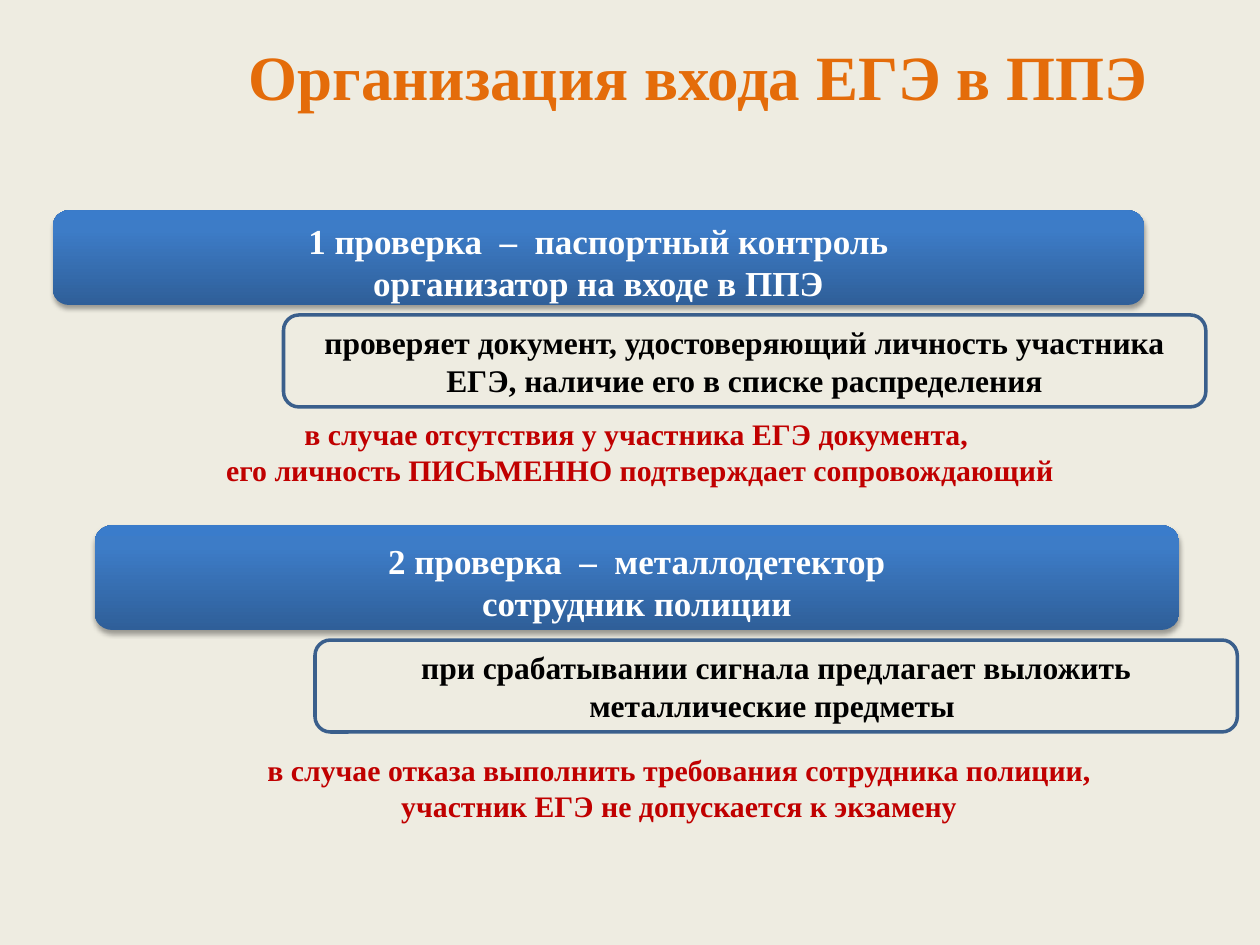
from copy import deepcopy
from dataclasses import dataclass

from lxml.etree import SubElement
from pptx import Presentation
from pptx.dml.color import RGBColor
from pptx.enum.shapes import MSO_SHAPE
from pptx.enum.text import MSO_ANCHOR, PP_ALIGN
from pptx.oxml.ns import qn
from pptx.util import Inches, Pt


@dataclass(frozen=True)
class Theme:
    font: str = "Times New Roman"
    background: str = "EEECE1"
    title: str = "E46C0A"
    header_text: str = "FFFFFF"
    detail_text: str = "000000"
    warning: str = "C00000"
    outline: str = "3A5F8C"
    shadow: str = "000000"
    header_gradient: tuple = ((0, "2F5F99"), (0.8, "3D7CC7"), (1, "3A7CCB"))
    title_size: int = 36
    header_size: int = 20
    detail_size: int = 18
    warning_size: int = 17


THEME = Theme()


def rgb(value):
    return RGBColor.from_string(value)


def write_lines(shape, lines, size, color):
    frame = shape.text_frame
    frame.text = "\n".join(lines)
    for paragraph in frame.paragraphs:
        paragraph.alignment = PP_ALIGN.CENTER
        font = paragraph.font
        font.name, font.size, font.bold = THEME.font, Pt(size), True
        font.color.rgb = rgb(color)


def fill_gradient(shape, stops):
    """Fill from bottom to top with any number of stops."""
    fill = shape.fill
    fill.gradient()
    fill.gradient_angle = 90
    stop_list = shape.element.spPr.find(qn("a:gradFill")).find(qn("a:gsLst"))
    for _ in range(len(stops) - len(stop_list)):
        stop_list.append(deepcopy(stop_list[-1]))
    for stop, (position, color) in zip(fill.gradient_stops, stops):
        stop.position = position
        stop.color.rgb = rgb(color)


def add_shadow(shape):
    effects = shape.element.spPr.find(qn("a:effectLst"))
    shadow = SubElement(effects, qn("a:outerShdw"), blurRad=str(Pt(3.1)),
                        dist=str(Pt(1.8)), dir="5400000", rotWithShape="0")
    color = SubElement(shadow, qn("a:srgbClr"), val=THEME.shadow)
    SubElement(color, qn("a:alpha"), val="35000")


def add_rounded_box(slide, left, top, width, height):
    shape = slide.shapes.add_shape(
        MSO_SHAPE.ROUNDED_RECTANGLE,
        Inches(left), Inches(top), Inches(width), Inches(height))
    shape.shadow.inherit = False
    shape.text_frame.word_wrap = True
    shape.text_frame.vertical_anchor = MSO_ANCHOR.MIDDLE
    return shape


def add_header(slide, box, lines):
    shape = add_rounded_box(slide, *box)
    fill_gradient(shape, THEME.header_gradient)
    shape.line.fill.background()
    add_shadow(shape)
    shape.text_frame.margin_top = Inches(0.06)
    shape.text_frame.margin_bottom = 0
    write_lines(shape, lines, THEME.header_size, THEME.header_text)


def add_detail(slide, left, top, text):
    shape = add_rounded_box(slide, left, top, 7.32, 0.73)
    shape.fill.background()
    shape.line.color.rgb = rgb(THEME.outline)
    shape.line.width = Pt(2)
    write_lines(shape, [text], THEME.detail_size, THEME.detail_text)


def add_text(slide, box, lines, size, color, wrap=False):
    shape = slide.shapes.add_textbox(*map(Inches, box))
    shape.text_frame.word_wrap = wrap
    write_lines(shape, lines, size, color)


def add_warning(slide, box, lines):
    add_text(slide, box, lines, THEME.warning_size, THEME.warning)


def main():
    presentation = Presentation()
    presentation.slide_width, presentation.slide_height = Inches(10), Inches(7.5)
    slide = presentation.slides.add_slide(presentation.slide_layouts[6])
    slide.background.fill.solid()
    slide.background.fill.fore_color.rgb = rgb(THEME.background)

    add_header(slide, (0.42, 1.67, 8.66, 0.75),
               ["1 проверка  –  паспортный контроль", "организатор на входе в ППЭ"])
    add_detail(slide, 2.25, 2.5,
               "проверяет документ, удостоверяющий личность участника ЕГЭ, "
               "наличие его в списке распределения")
    add_header(slide, (0.75, 4.17, 8.61, 0.83),
               ["2 проверка  –  металлодетектор", "сотрудник полиции"])
    add_detail(slide, 2.5, 5.08,
               "при срабатывании сигнала предлагает выложить металлические предметы ")
    add_warning(slide, (1.67, 3.25, 6.82, 0.67),
                ["в случае отсутствия у участника ЕГЭ документа, ",
                 "его личность ПИСЬМЕННО подтверждает сопровождающий"])
    add_warning(slide, (2, 5.92, 6.78, 0.67),
                ["в случае отказа выполнить требования сотрудника полиции,",
                 "участник ЕГЭ не допускается к экзамену"])
    add_text(slide, (1.08, 0.25, 8.92, 0.71), ["Организация входа ЕГЭ в ППЭ"],
             THEME.title_size, THEME.title, wrap=True)

    presentation.save("out.pptx")


if __name__ == "__main__":
    main()
